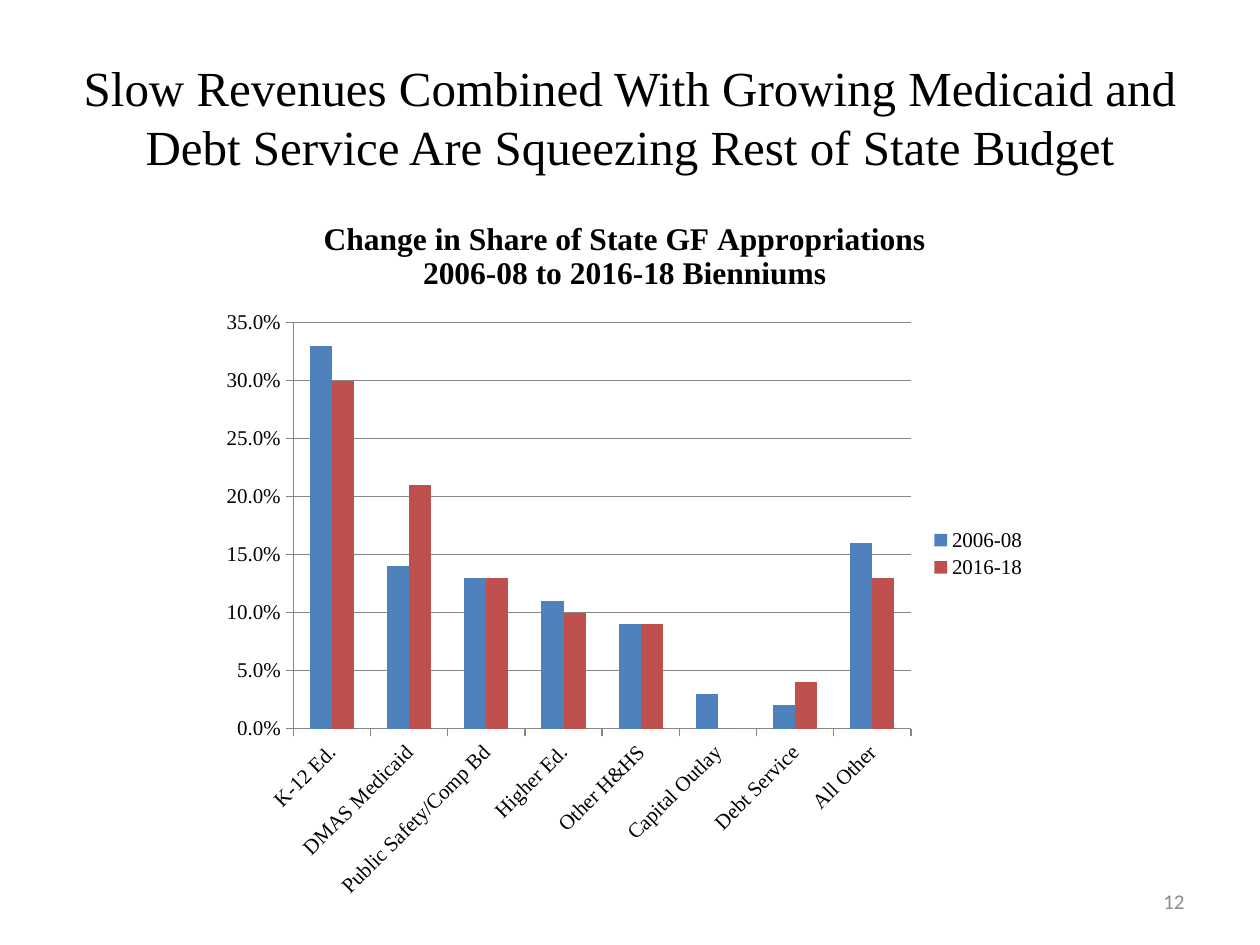
from pptx import Presentation
from pptx.chart import data
from pptx.dml.color import RGBColor
from pptx.enum import chart as ch, text
from pptx.util import Pt

SERIF = "Times New Roman"
CATEGORIES = ["K-12 Ed.", "DMAS Medicaid", "Public Safety/Comp Bd", "Higher Ed.",
              "Other H&HS", "Capital Outlay", "Debt Service", "All Other"]
BIENNIUMS = [
    ("2006-08", "4F81BD", [0.33, 0.14, 0.13, 0.11, 0.09, 0.03, 0.02, 0.16]),
    ("2016-18", "C0504D", [0.3, 0.21, 0.13, 0.1, 0.09, 0, 0.04, 0.13]),
]


def color(hex_code):
    return RGBColor.from_string(hex_code)


class Deck:
    ink = "000000"
    muted = "8C8C8C"
    rule = "868686"

    def __init__(self):
        self.prs = Presentation()
        self.prs.slide_width, self.prs.slide_height = Pt(720), Pt(540)
        self.slide = self.prs.slides.add_slide(self.prs.slide_layouts[6])

    def style(self, font, size, face=SERIF, hex_code=ink, bold=False):
        font.name, font.size, font.bold = face, Pt(size), bold
        font.color.rgb = color(hex_code)

    def text(self, box, wording, align, size, **look):
        frame = self.slide.shapes.add_textbox(*map(Pt, box)).text_frame
        frame.word_wrap = True
        frame.vertical_anchor = text.MSO_ANCHOR.MIDDLE
        paragraph = frame.paragraphs[0]
        paragraph.alignment = align
        run = paragraph.add_run()
        run.text = wording
        self.style(run.font, size, **look)

    def column_chart(self, box, heading, categories, series):
        source = data.CategoryChartData(number_format="0.0%")
        source.categories = categories
        for name, _, shares in series:
            source.add_series(name, shares)
        chart = self.slide.shapes.add_chart(
            ch.XL_CHART_TYPE.COLUMN_CLUSTERED, *map(Pt, box), source).chart
        self.style(chart.font, 12)

        title = chart.chart_title.text_frame
        for i, line in enumerate(heading):
            paragraph = title.add_paragraph() if i else title.paragraphs[0]
            run = paragraph.add_run()
            run.text = line
            self.style(run.font, 18, bold=True)
        chart.chart_title.include_in_layout = False

        chart.has_legend = True
        chart.legend.position = ch.XL_LEGEND_POSITION.RIGHT
        chart.legend.include_in_layout = False
        self.style(chart.legend.font, 12)

        plot = chart.plots[0]
        plot.gap_width, plot.overlap, plot.vary_by_categories = 150, 0, False
        for bars, (_, fill, _) in zip(plot.series, series):
            bars.invert_if_negative = False
            bars.format.fill.solid()
            bars.format.fill.fore_color.rgb = color(fill)
        self.axes(chart)

    def axes(self, chart):
        shares, areas = chart.value_axis, chart.category_axis
        shares.minimum_scale, shares.maximum_scale, shares.major_unit = 0, 0.35, 0.05
        shares.has_major_gridlines = True
        shares.tick_labels.number_format = "0.0%"
        shares.tick_labels.number_format_is_linked = False
        for axis in (shares, areas):
            axis.major_tick_mark = ch.XL_TICK_MARK.OUTSIDE
            self.style(axis.tick_labels.font, 12)
        for line in (shares.format.line, areas.format.line,
                     shares.major_gridlines.format.line):
            line.color.rgb = color(self.rule)
            line.width = Pt(0.75)
        # Slant the category labels upwards by 45 degrees
        areas._element.txPr.bodyPr.set("rot", "-2700000")


def main():
    deck = Deck()
    deck.text((36, 21.6, 648, 90),
              "Slow Revenues Combined With Growing Medicaid and "
              "Debt Service Are Squeezing Rest of State Budget",
              text.PP_ALIGN.CENTER, 28)
    deck.text((516, 500.5, 168, 28.75), "12", text.PP_ALIGN.RIGHT, 12,
              face="Calibri", hex_code=deck.muted)
    deck.column_chart((120, 111.6, 474, 409.7),
                      ["Change in Share of State GF Appropriations",
                       "2006-08 to 2016-18 Bienniums"],
                      CATEGORIES, BIENNIUMS)
    deck.prs.save("out.pptx")


if __name__ == "__main__":
    main()
